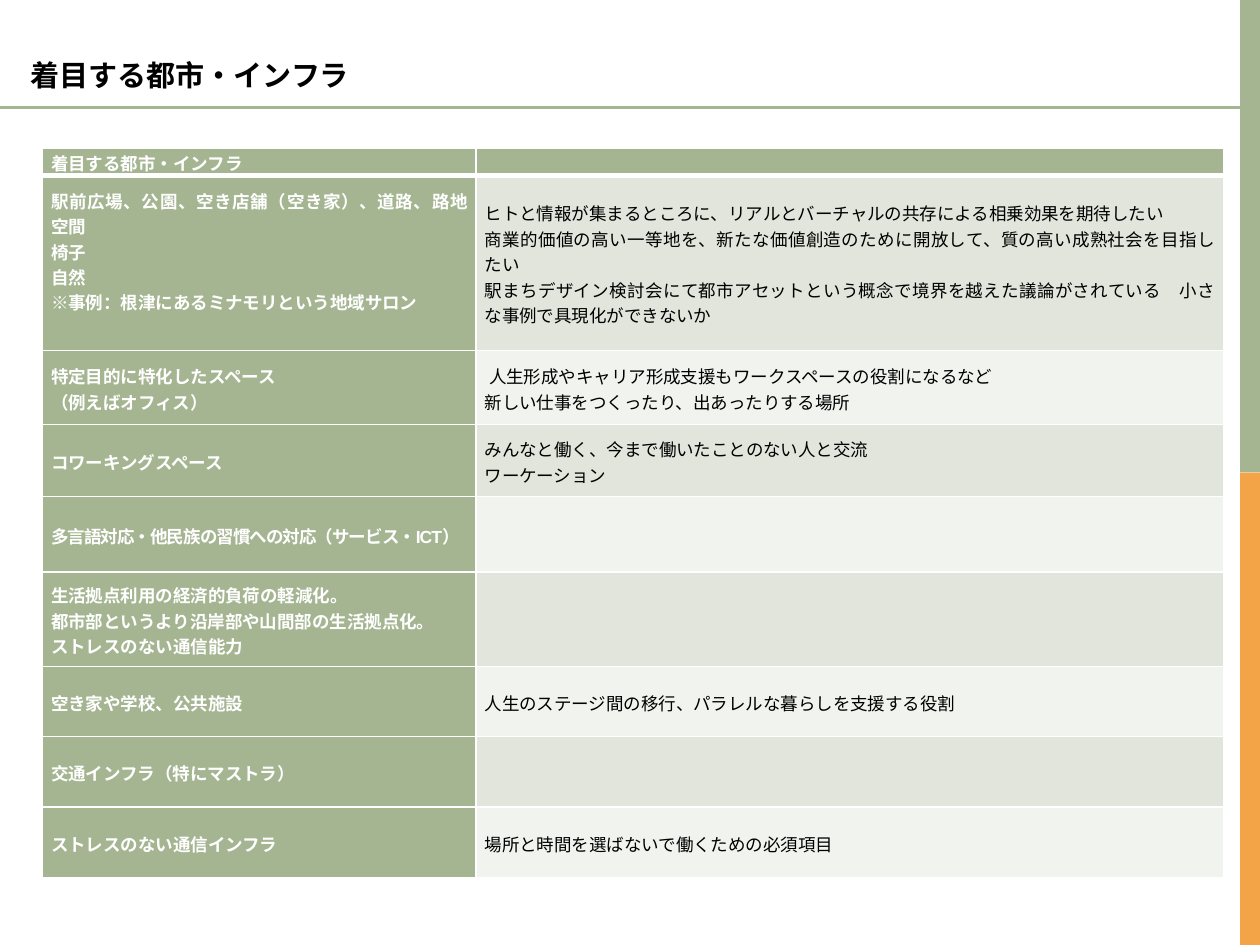
from dataclasses import dataclass

from lxml import etree
from pptx import Presentation
from pptx.dml.color import RGBColor
from pptx.enum.shapes import MSO_CONNECTOR, MSO_SHAPE
from pptx.enum.text import MSO_ANCHOR, MSO_AUTO_SIZE, PP_ALIGN
from pptx.oxml.ns import qn
from pptx.util import Cm, Pt

RECTANGLE = MSO_SHAPE.RECTANGLE
STRAIGHT = MSO_CONNECTOR.STRAIGHT
MIDDLE, TOP = MSO_ANCHOR.MIDDLE, MSO_ANCHOR.TOP
JUSTIFY, LEFT = PP_ALIGN.JUSTIFY, PP_ALIGN.LEFT
FIT_SHAPE = MSO_AUTO_SIZE.SHAPE_TO_FIT_TEXT

TITLE = "着目する都市・インフラ"
COLUMN_WIDTHS = (8.74, 15.06)
ROW_HEIGHTS = (0.5, 3.53, 1.5, 1.45, 1.52, 1.9, 1.42, 1.42, 1.42)
ROWS = (
    (("着目する都市・インフラ",), ()),
    (("駅前広場、公園、空き店舗（空き家）、道路、路地空間", "椅子", "自然",
      "※事例：根津にあるミナモリという地域サロン"),
     ("ヒトと情報が集まるところに、リアルとバーチャルの共存による相乗効果を期待したい",
      "商業的価値の高い一等地を、新たな価値創造のために開放して、質の高い成熟社会を目指したい",
      "駅まちデザイン検討会にて都市アセットという概念で境界を越えた議論がされている　"
      "小さな事例で具現化ができないか")),
    (("特定目的に特化したスペース", "（例えばオフィス）"),
     ("人生形成やキャリア形成支援もワークスペースの役割になるなど",
      "新しい仕事をつくったり、出あったりする場所")),
    (("コワーキングスペース",),
     ("みんなと働く、今まで働いたことのない人と交流", "ワーケーション")),
    (("多言語対応・他民族の習慣への対応（サービス・ICT）",), ()),
    (("生活拠点利用の経済的負荷の軽減化。",
      "都市部というより沿岸部や山間部の生活拠点化。",
      "ストレスのない通信能力"), ()),
    (("空き家や学校、公共施設",),
     ("人生のステージ間の移行、パラレルな暮らしを支援する役割",)),
    (("交通インフラ（特にマストラ）",), ()),
    (("ストレスのない通信インフラ",),
     ("場所と時間を選ばないで働くための必須項目",)),
)


@dataclass(frozen=True)
class Theme:
    green: str = "A5B592"
    orange: str = "F3A447"
    bands: tuple = ("F0F3EE", "E1E5DC")
    white: str = "FFFFFF"
    black: str = "000000"
    title_font: str = "Noto Sans CJK JP"
    body_font: str = "Arial"
    title_size: float = 16.6
    body_size: float = 10
    body_line_spacing: float = 1.3
    rule_width: float = 1.75
    border_width: float = 1
    header_border_width: float = 3


class SlideBuilder:
    def __init__(self, slide, theme):
        self.slide = slide
        self.theme = theme

    def add_run(self, paragraph, text, font_name, size, color, bold):
        run = paragraph.add_run()
        run.text = text
        font = run.font
        font.name, font.size, font.bold = font_name, Pt(size), bold
        font.color.rgb = RGBColor.from_string(color)
        etree.SubElement(run._r.get_or_add_rPr(), qn("a:ea"), typeface=font_name)

    def set_title(self, text, left, top, width, height):
        title = self.slide.shapes.title
        title.left, title.top = Cm(left), Cm(top)
        title.width, title.height = Cm(width), Cm(height)
        frame = title.text_frame
        frame.word_wrap = False
        frame.auto_size = FIT_SHAPE
        frame.vertical_anchor = TOP
        paragraph = frame.paragraphs[0]
        paragraph.alignment = LEFT
        self.add_run(paragraph, text, self.theme.title_font,
                     self.theme.title_size, self.theme.black, True)

    def add_bar(self, left, top, width, height, color):
        bar = self.slide.shapes.add_shape(
            RECTANGLE, Cm(left), Cm(top), Cm(width), Cm(height))
        bar.shadow.inherit = False
        bar.fill.solid()
        bar.fill.fore_color.rgb = RGBColor.from_string(color)
        bar.line.fill.background()

    def add_rule(self, left, top, right):
        rule = self.slide.shapes.add_connector(
            STRAIGHT, Cm(left), Cm(top), Cm(right), Cm(top))
        rule.line.color.rgb = RGBColor.from_string(self.theme.green)
        rule.line.width = Pt(self.theme.rule_width)
        etree.SubElement(rule._element.spPr, qn("a:effectLst"))

    def set_borders(self, cell, top_width, bottom_width):
        side_width = self.theme.border_width
        widths = {"L": side_width, "R": side_width,
                  "T": top_width, "B": bottom_width}
        properties = cell._tc.get_or_add_tcPr()
        for position, (side, width) in enumerate(widths.items()):
            line = etree.Element(qn(f"a:ln{side}"), w=str(Pt(width)))
            fill = etree.SubElement(line, qn("a:solidFill"))
            etree.SubElement(fill, qn("a:srgbClr"), val=self.theme.white)
            properties.insert(position, line)

    def fill_cell(self, cell, lines, fill, color, bold):
        cell.fill.solid()
        cell.fill.fore_color.rgb = RGBColor.from_string(fill)
        cell.vertical_anchor = MIDDLE
        cell.margin_left = cell.margin_right = Cm(0.17)
        cell.margin_top = cell.margin_bottom = 0
        frame = cell.text_frame
        for index, line in enumerate(lines):
            paragraph = frame.add_paragraph() if index else frame.paragraphs[0]
            paragraph.alignment = JUSTIFY
            paragraph.line_spacing = self.theme.body_line_spacing
            self.add_run(paragraph, line, self.theme.body_font,
                         self.theme.body_size, color, bold)
        if not lines:
            # An empty cell would otherwise keep 18 pt and stretch its row.
            etree.SubElement(frame.paragraphs[0]._p, qn("a:endParaRPr"),
                             sz=str(int(self.theme.body_size * 100)))

    def add_table(self, left, top, column_widths, row_heights, rows):
        theme = self.theme
        table = self.slide.shapes.add_table(
            len(rows), len(column_widths), Cm(left), Cm(top),
            Cm(sum(column_widths)), Cm(sum(row_heights))).table
        for column, width in zip(table.columns, column_widths):
            column.width = Cm(width)
        for row_index, (row, height) in enumerate(zip(rows, row_heights)):
            table.rows[row_index].height = Cm(height)
            top_width, bottom_width = (
                theme.header_border_width if row_index == header_edge
                else theme.border_width for header_edge in (1, 0))
            for column_index, lines in enumerate(row):
                cell = table.cell(row_index, column_index)
                if row_index == 0 or column_index == 0:
                    self.fill_cell(cell, lines, theme.green, theme.white, True)
                else:
                    self.fill_cell(cell, lines, theme.bands[row_index % 2],
                                   theme.black, False)
                self.set_borders(cell, top_width, bottom_width)
        return table


def main():
    presentation = Presentation()
    presentation.slide_width, presentation.slide_height = Cm(25.4), Cm(19.05)
    slide = presentation.slides.add_slide(presentation.slide_layouts[5])
    theme = Theme()
    builder = SlideBuilder(slide, theme)

    bar_height = 19.05 / 2
    for index, color in enumerate((theme.green, theme.orange)):
        builder.add_bar(25, index * bar_height, 0.4, bar_height, color)
    table = builder.add_table(0.86, 2.98, COLUMN_WIDTHS, ROW_HEIGHTS, ROWS)
    table.cell(1, 0).margin_bottom = Cm(0.51)
    indented = table.cell(2, 1).text_frame.paragraphs[0]
    indented._p.get_or_add_pPr().set("indent", str(Cm(0.09)))
    # Slightly tighter letters keep the longest row label on one line.
    long_label = table.cell(4, 0).text_frame.paragraphs[0].runs[0]
    long_label._r.get_or_add_rPr().set("spc", "-50")
    builder.set_title(TITLE, 0.37, 1.04, 7.04, 0.97)
    builder.add_rule(0, 2.16, 25.4)

    presentation.save("out.pptx")


if __name__ == "__main__":
    main()
